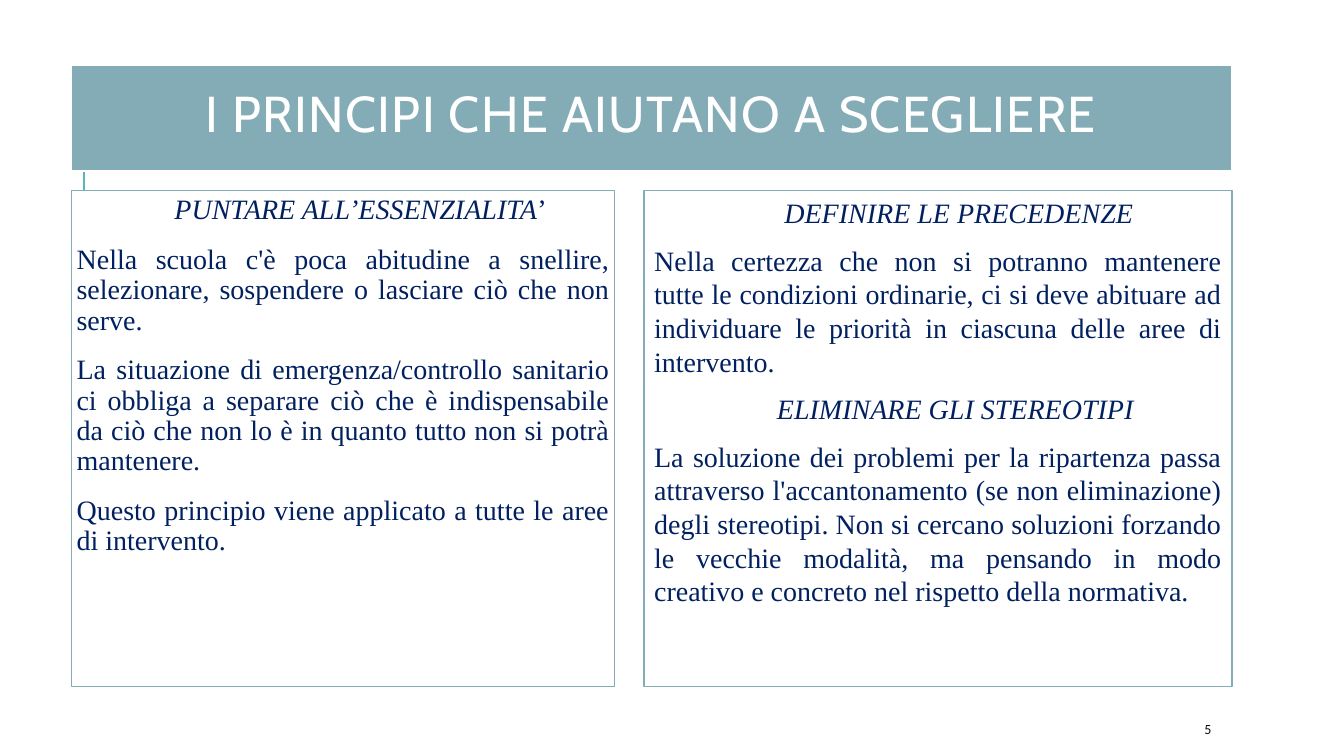
from lxml.etree import SubElement
from pptx import Presentation
from pptx.dml.color import RGBColor
from pptx.enum.shapes import MSO_CONNECTOR
from pptx.enum.text import MSO_ANCHOR, MSO_AUTO_SIZE, PP_ALIGN
from pptx.oxml.ns import qn
from pptx.util import Cm, Pt

COLORS = {"teal": "84ACB6", "accent": "58B6C0", "white": "FFFFFF",
          "navy": "002060", "number": "0D0D0D"}


def rgb(name):
    return RGBColor.from_string(COLORS[name])


def write(frame, text, size=20, font="Times New Roman", color="navy", italic=False,
          align=PP_ALIGN.LEFT, spacing=1.0, before=0, after=0, indent=0, tracking=0, tail=""):
    """Write one paragraph; tail is an upright ending."""
    first = not frame.text
    paragraph = frame.paragraphs[0] if first else frame.add_paragraph()
    props = paragraph._p.get_or_add_pPr()
    props.set("marL", str(Pt(indent)))
    props.set("indent", "0")
    SubElement(props, qn("a:buNone"))
    paragraph.alignment = align
    paragraph.line_spacing = spacing
    paragraph.space_before = Pt(0 if first else before)
    paragraph.space_after = Pt(after)
    for part, slanted in ((text, italic), (tail, False)):
        if part:
            run = paragraph.add_run()
            run.text = part
            run.font.size = Pt(size)
            run.font.name = font
            run.font.italic = slanted
            run.font.color.rgb = rgb(color)
            if tracking:
                run._r.get_or_add_rPr().set("spc", str(tracking * 100))


deck = Presentation()
deck.slide_width, deck.slide_height = Cm(33.87), Cm(19.05)
slide = deck.slides.add_slide(deck.slide_layouts.get_by_name("Two Content"))
heading, essentials, priorities = slide.placeholders

# Accent line, behind everything else
accent = slide.shapes.add_connector(MSO_CONNECTOR.STRAIGHT, Cm(2.11), Cm(4.83), Cm(2.11), Cm(2.29))
accent.line.color.rgb = rgb("accent")
accent.line.width = Pt(1.5)
SubElement(accent._element.spPr, qn("a:effectLst"))
slide.shapes._spTree.insert(2, accent._element)

# Title band and the two panels
for panel, left, top, width, height, fill, border, weight, anchor in (
    (heading, 1.8, 1.63, 29.24, 2.67, "teal", "white", 1.5, MSO_ANCHOR.MIDDLE),
    (essentials, 1.8, 4.8, 13.69, 12.5, "white", "teal", 1.25, MSO_ANCHOR.TOP),
    (priorities, 16.23, 4.8, 14.81, 12.5, "white", "teal", 1.25, MSO_ANCHOR.TOP),
):
    panel.left, panel.top, panel.width, panel.height = Cm(left), Cm(top), Cm(width), Cm(height)
    panel.fill.solid()
    panel.fill.fore_color.rgb = rgb(fill)
    panel.line.color.rgb = rgb(border)
    panel.line.width = Pt(weight)
    panel.text_frame.auto_size = MSO_AUTO_SIZE.NONE
    panel.text_frame.vertical_anchor = anchor

write(heading.text_frame, "I PRINCIPI CHE AIUTANO A SCEGLIERE", size=36, font="Cabin",
      color="white", align=PP_ALIGN.CENTER, spacing=0.8, tracking=1)

# Left panel
essentials.text_frame.margin_left = essentials.text_frame.margin_right = Cm(0.13)
tight = {"spacing": 0.9, "before": 12, "after": 2}
write(essentials.text_frame, "PUNTARE ALL’ESSENZIALITA", tail="’", italic=True,
      align=PP_ALIGN.CENTER, indent=25, **tight)
for principle in (
    "Nella scuola c'è poca abitudine a snellire, selezionare, sospendere o lasciare ciò che non serve.",
    "La situazione di emergenza/controllo sanitario ci obbliga a separare ciò che è indispensabile "
    "da ciò che non lo è in quanto tutto non si potrà mantenere.",
    "Questo principio viene applicato a tutte le aree di intervento.",
):
    write(essentials.text_frame, principle, align=PP_ALIGN.JUSTIFY, **tight)

# Right panel
for topic, indent, explanation in (
    ("DEFINIRE LE PRECEDENZE", 30,
     "Nella certezza che non si potranno mantenere tutte le condizioni ordinarie, ci si deve "
     "abituare ad individuare le priorità in ciascuna delle aree di intervento."),
    ("ELIMINARE GLI STEREOTIPI", 25,
     "La soluzione dei problemi per la ripartenza passa attraverso l'accantonamento (se non "
     "eliminazione) degli stereotipi. Non si cercano soluzioni forzando le vecchie modalità, ma "
     "pensando in modo creativo e concreto nel rispetto della normativa."),
):
    write(priorities.text_frame, topic, italic=True, align=PP_ALIGN.CENTER, before=10, indent=indent)
    write(priorities.text_frame, explanation, align=PP_ALIGN.JUSTIFY, before=10)

# Page number
page = slide.shapes.add_textbox(Cm(30.1), Cm(17.98), Cm(2.69), Cm(0.76))
page.text_frame.word_wrap = True
page.text_frame.vertical_anchor = MSO_ANCHOR.MIDDLE
write(page.text_frame, "5", size=10, font="Calibri", color="number")

deck.save("out.pptx")
